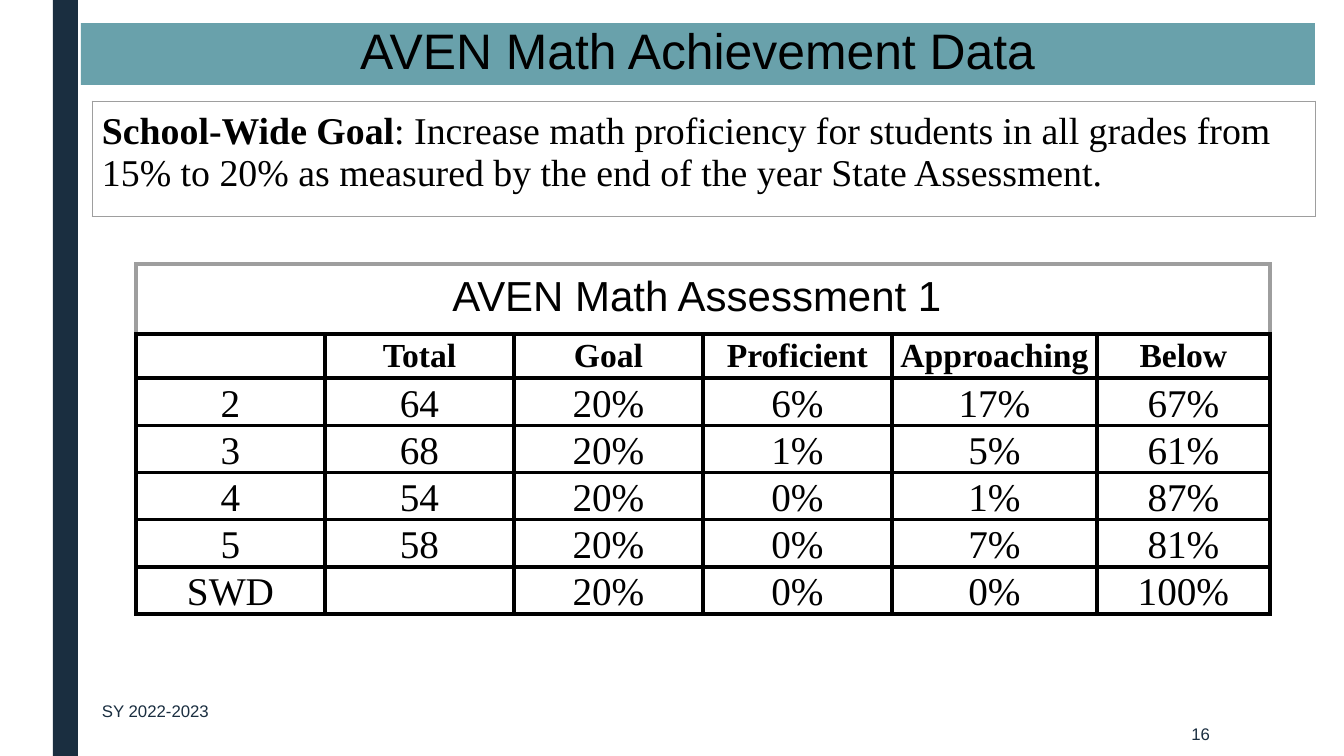
"""Build the math achievement slide with its goal box and assessment table."""
from lxml.etree import SubElement
from pptx import Presentation
from pptx.dml.color import RGBColor
from pptx.enum.shapes import MSO_SHAPE
from pptx.enum.text import MSO_ANCHOR as Anchor, MSO_AUTO_SIZE as AutoSize, PP_ALIGN as Align
from pptx.oxml.ns import qn
from pptx.util import Pt

TITLE = "AVEN Math Achievement Data"
GOAL_LABEL = "School-Wide Goal"
GOAL_TEXT = (": Increase math proficiency for students in all grades from 15% to 20% "
             "as measured by the end of the year State Assessment.")
RESULTS_TITLE = "AVEN Math Assessment 1 "
RESULTS = [
    ["", "Total", "Goal", "Proficient", "Approaching", "Below"],
    ["2", "64", "20%", "6%", "17%", "67%"],
    ["3", "68", "20%", "1%", "5%", "61%"],
    ["4", "54", "20%", "0%", "1%", "87%"],
    ["5", "58", "20%", "0%", "7%", "81%"],
    ["SWD", "", "20%", "0%", "0%", "100%"],
]
FOOTERS = [
    ("16", (1044, 712, 176, 44), Align.RIGHT),
    ("SY 2022-2023", (92, 689, 208, 44), Align.LEFT),
]

NAVY = RGBColor(0x1A, 0x2E, 0x40)
TEAL = RGBColor(0x69, 0xA1, 0xAB)
GRAY = RGBColor(0x9E, 0x9E, 0x9E)
BLACK = RGBColor(0, 0, 0)
SANS, SERIF = "Arial", "Times New Roman"

SLIDE_SIZE = (1344, 756)
BAR_BOX = (53, 0, 25, 756)
TITLE_BOX = (81, 23, 1234, 62)
GOAL_ORIGIN, GOAL_COLUMNS, GOAL_ROWS = (92, 101), [102] * 12, [115]
RESULTS_ORIGIN = (136, 264)
RESULTS_COLUMNS = [189] * 4 + [205, 173]
RESULTS_ROWS = [67, 44] + [43] * 5


def px(length):
    """Turn px into EMU."""
    return round(length * 914400 / 100.8)


def set_font(paragraph, name, size, color=BLACK, bold=False):
    """Format all runs of a paragraph alike."""
    font = paragraph.font
    font.name, font.size, font.bold = name, Pt(size), bold
    font.color.rgb = color


def set_margins(cell, horizontal, vertical):
    """Set the four cell margins in px."""
    cell.margin_left = cell.margin_right = px(horizontal)
    cell.margin_top = cell.margin_bottom = px(vertical)


def set_borders(cell, width, colors):
    """Draw left, right, top and bottom cell borders."""
    properties = cell._tc.get_or_add_tcPr()
    for side, color in zip("LRTB", colors):
        line = SubElement(properties, qn(f"a:ln{side}"), w=str(Pt(width)))
        fill = SubElement(line, qn("a:solidFill"))
        SubElement(fill, qn("a:srgbClr"), val=str(color))
    cell.fill.background()


def add_table(slide, origin, columns, rows, width, top_colors, color):
    """Add a bordered table whose first row is one merged cell."""
    box = (*origin, sum(columns), sum(rows))
    table = slide.shapes.add_table(len(rows), len(columns), *map(px, box)).table
    table.first_row = table.horz_banding = False
    for column, length in zip(table.columns, columns):
        column.width = px(length)
    for index, (row, length) in enumerate(zip(table.rows, rows)):
        row.height = px(length)
        for cell in row.cells:
            set_borders(cell, width, [color] * 4 if index else top_colors)
    heading = table.cell(0, 0)
    heading.merge(table.cell(0, len(columns) - 1))
    set_margins(heading, 10, 10)
    return table


def add_title(slide):
    """Fill and place the title band."""
    title = slide.shapes.title
    title.left, title.top, title.width, title.height = map(px, TITLE_BOX)
    title.fill.solid()
    title.fill.fore_color.rgb = TEAL
    frame = title.text_frame
    frame.text = TITLE
    frame.auto_size, frame.vertical_anchor = AutoSize.NONE, Anchor.MIDDLE
    paragraph = frame.paragraphs[0]
    paragraph.alignment, paragraph.line_spacing = Align.CENTER, 0.89
    set_font(paragraph, SANS, 35.6)


def add_goal(slide):
    """Add the goal box."""
    table = add_table(slide, GOAL_ORIGIN, GOAL_COLUMNS, GOAL_ROWS, 0.75, [GRAY] * 4, GRAY)
    paragraph = table.cell(0, 0).text_frame.paragraphs[0]
    set_font(paragraph, SERIF, 27)
    for text, bold in ((GOAL_LABEL, True), (GOAL_TEXT, False)):
        run = paragraph.add_run()
        run.text, run.font.bold = text, bold


def add_results(slide):
    """Add the assessment table."""
    table = add_table(slide, RESULTS_ORIGIN, RESULTS_COLUMNS, RESULTS_ROWS, 3,
                      [GRAY, GRAY, GRAY, BLACK], BLACK)
    heading = table.cell(0, 0)
    heading.text = RESULTS_TITLE
    paragraph = heading.text_frame.paragraphs[0]
    paragraph.alignment = Align.CENTER
    set_font(paragraph, SANS, 30)
    for row, values in enumerate(RESULTS, 1):
        is_header = row == 1
        for column, value in enumerate(values):
            if not value:
                continue
            cell = table.cell(row, column)
            cell.text = value
            cell.vertical_anchor = Anchor.MIDDLE if is_header else Anchor.BOTTOM
            set_margins(cell, 8, 0)
            paragraph = cell.text_frame.paragraphs[0]
            paragraph.alignment = Align.CENTER
            set_font(paragraph, SERIF, 24 if is_header else 28, bold=is_header)


def add_footer(slide, text, box, alignment):
    """Add one small line at the foot of the slide."""
    frame = slide.shapes.add_textbox(*map(px, box)).text_frame
    frame.text, frame.word_wrap, frame.vertical_anchor = text, True, Anchor.MIDDLE
    paragraph = frame.paragraphs[0]
    paragraph.alignment = alignment
    set_font(paragraph, SANS, 12, NAVY)


def main():
    """Build and save the presentation."""
    presentation = Presentation()
    presentation.slide_width, presentation.slide_height = map(px, SLIDE_SIZE)
    slide = presentation.slides.add_slide(presentation.slide_layouts[5])
    bar = slide.shapes.add_shape(MSO_SHAPE.RECTANGLE, *map(px, BAR_BOX))
    bar.shadow.inherit = False
    bar.fill.solid()
    bar.fill.fore_color.rgb = NAVY
    bar.line.fill.background()
    add_title(slide)
    for footer in FOOTERS:
        add_footer(slide, *footer)
    add_goal(slide)
    add_results(slide)
    presentation.save("out.pptx")


if __name__ == "__main__":
    main()
